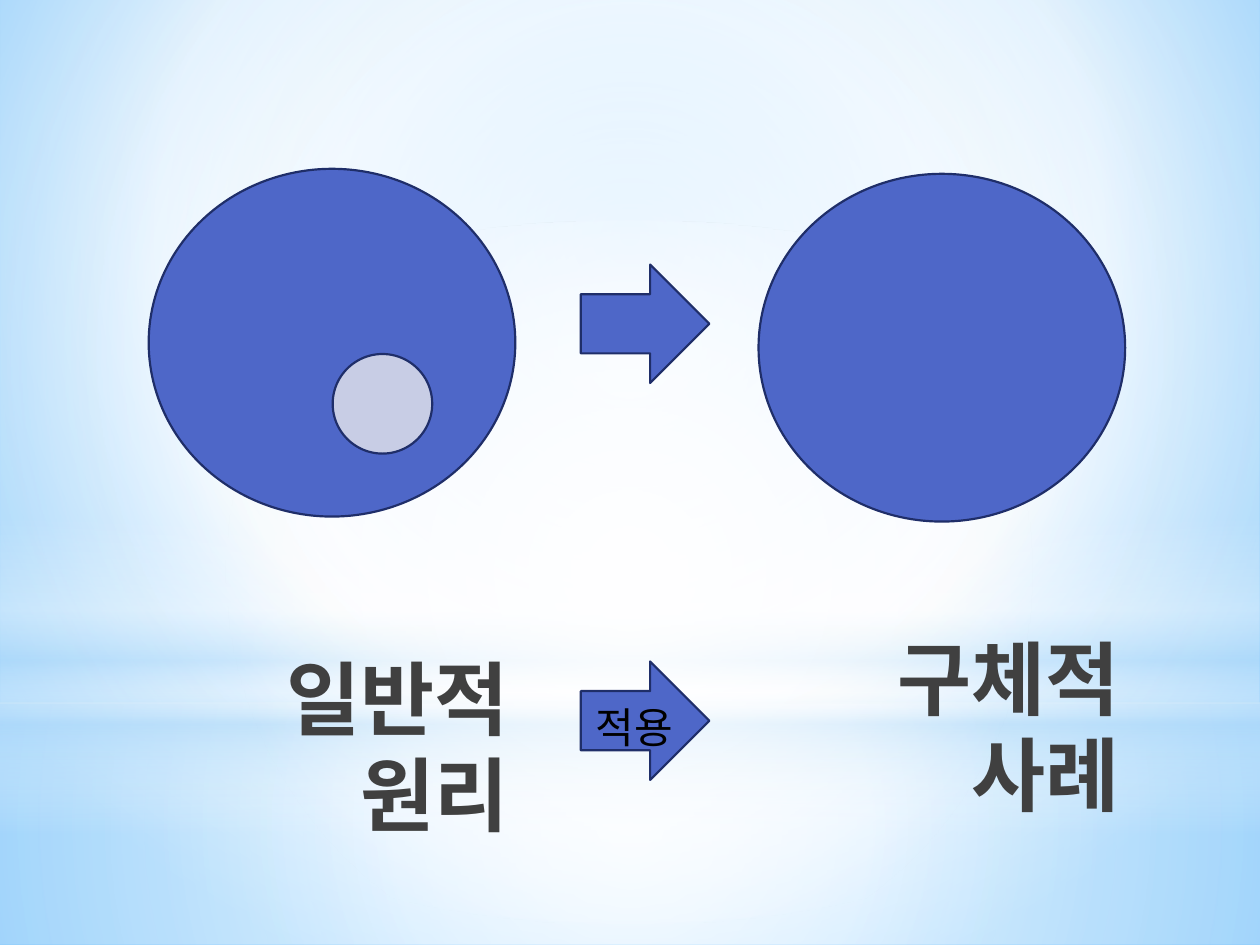
from lxml import etree
from pptx import Presentation
from pptx.dml.color import RGBColor
from pptx.enum.shapes import MSO_SHAPE
from pptx.enum.text import MSO_ANCHOR, PP_ALIGN
from pptx.oxml.ns import qn
from pptx.util import Inches, Pt

RECT, OVAL, ARROW = MSO_SHAPE.RECTANGLE, MSO_SHAPE.OVAL, MSO_SHAPE.RIGHT_ARROW
LEFT, RIGHT = PP_ALIGN.LEFT, PP_ALIGN.RIGHT
TOP = MSO_ANCHOR.TOP

BLUE = RGBColor(0x4E, 0x67, 0xC8)
PALE = RGBColor(0xC8, 0xCD, 0xE5)
NAVY = RGBColor(0x1F, 0x2E, 0x69)
GREY = RGBColor(0x40, 0x40, 0x40)
BLACK = RGBColor(0, 0, 0)
WHITE = RGBColor(0xFF, 0xFF, 0xFF)
SKY = RGBColor(0xB4, 0xDC, 0xFA)
BG_INNER = RGBColor(0x9E, 0xD5, 0xFF)
BG_OUTER = RGBColor(0x5B, 0xB9, 0xFF)
CENTRE = (50, 50, 50, 50)


def apply_gradient(solid, stops, focus=None):
    """Replace a solidFill by stops of (percent, colour, opacity).

    focus holds the left, top, right and bottom insets of a circular
    gradient; without it the gradient runs from top to bottom.
    """
    gradient = etree.Element(qn("a:gradFill"), rotWithShape="1")
    stop_list = etree.SubElement(gradient, qn("a:gsLst"))
    for position, color, opacity in stops:
        stop = etree.SubElement(stop_list, qn("a:gs"), pos=str(position * 1000))
        rgb = etree.SubElement(stop, qn("a:srgbClr"), val=str(color))
        if opacity < 100:
            etree.SubElement(rgb, qn("a:alpha"), val=str(opacity * 1000))
    if focus:
        circle = etree.SubElement(gradient, qn("a:path"), path="circle")
        insets = {side: str(inset * 1000) for side, inset in zip("ltrb", focus)}
        etree.SubElement(circle, qn("a:fillToRect"), insets)
    else:
        etree.SubElement(gradient, qn("a:lin"), ang="5400000", scaled="0")
    solid.getparent().replace(solid, gradient)


def write_text(frame, text, size, color, bold=False, align=LEFT, font="Roboto"):
    para = frame.paragraphs[0]
    para.alignment = align
    span = para.add_run()
    span.text = text
    span.font.size = Pt(size)
    span.font.bold = bold
    span.font.color.rgb = color
    span.font.name = font
    etree.SubElement(span.font._element, qn("a:ea"), typeface=font)


class SlideBuilder:
    def __init__(self, page):
        self.page = page
        self.line_color, self.line_width = NAVY, Pt(1.25)

    def background(self, stops, focus):
        self.page.background.fill.solid()
        solid = next(self.page.background._cSld.iter(qn("a:solidFill")))
        apply_gradient(solid, stops, focus)

    def glow(self, kind, top, height, stops, focus=None):
        """Add a full-width translucent layer."""
        layer = self.page.shapes.add_shape(
            kind, 0, Inches(top), Inches(10), Inches(height))
        layer.shadow.inherit = False
        layer.line.fill.background()
        layer.fill.solid()
        layer.fill.fore_color.rgb = WHITE
        solid = layer._element.spPr.find(qn("a:solidFill"))
        apply_gradient(solid, stops, focus)

    def shape(self, kind, left, top, width, height, fill=BLUE, parent=None):
        shapes = (parent or self.page).shapes
        item = shapes.add_shape(
            kind, Inches(left), Inches(top), Inches(width), Inches(height))
        item.shadow.inherit = False
        item.fill.solid()
        item.fill.fore_color.rgb = fill
        item.line.color.rgb = self.line_color
        item.line.width = self.line_width

    def text(self, text, left, top, width, height, parent=None, **style):
        shapes = (parent or self.page).shapes
        box = shapes.add_textbox(
            Inches(left), Inches(top), Inches(width), Inches(height))
        box.text_frame.word_wrap = True
        box.text_frame.vertical_anchor = TOP
        write_text(box.text_frame, text, **style)

    def heading(self, text, left, top):
        self.text(text, left, top, 2.65, 1.25,
                  size=46, color=GREY, bold=True, align=RIGHT)

    def big_circle(self, left, top):
        self.shape(OVAL, left, top, 2.91, 2.76)

    def arrow(self, top, parent=None):
        self.shape(ARROW, 4.61, top, 1.02, 0.94, parent=parent)

    def labelled_arrow(self, text, top):
        group = self.page.shapes.add_group_shape()
        self.arrow(top, group)
        self.text(text, 4.63, top + 0.27, 1.16, 0.5, parent=group,
                  size=24, color=BLACK)


def main():
    deck = Presentation()
    deck.slide_width, deck.slide_height = Inches(10), Inches(7.5)
    slide = SlideBuilder(deck.slides.add_slide(deck.slide_layouts[6]))

    slide.background(
        [(0, BG_INNER, 100), (60, WHITE, 100), (100, BG_OUTER, 100)],
        (20, 10, 20, 60))
    slide.glow(RECT, 5.58, 1.92,
               [(0, WHITE, 91), (37, WHITE, 76), (100, SKY, 79)], CENTRE)
    slide.glow(RECT, 0, 5.58,
               [(0, WHITE, 89), (48, WHITE, 62), (100, SKY, 79)], CENTRE)
    slide.glow(RECT, 4.12, 2.5,
               [(0, WHITE, 0), (29, WHITE, 30), (45, SKY, 40),
                (55, WHITE, 26), (65, SKY, 60), (100, WHITE, 0)])
    slide.glow(OVAL, 1.75, 5.58, [(0, WHITE, 100), (56, WHITE, 0)], CENTRE)

    slide.heading("구체적 사례", 6.33, 4.94)
    slide.big_circle(1.18, 1.34)
    slide.shape(OVAL, 2.64, 2.81, 0.79, 0.79, fill=PALE)
    slide.arrow(2.1)
    slide.big_circle(6.02, 1.38)
    slide.heading("일반적 원리", 1.48, 5.1)
    slide.labelled_arrow("적용", 5.25)

    deck.save("out.pptx")


if __name__ == "__main__":
    main()
